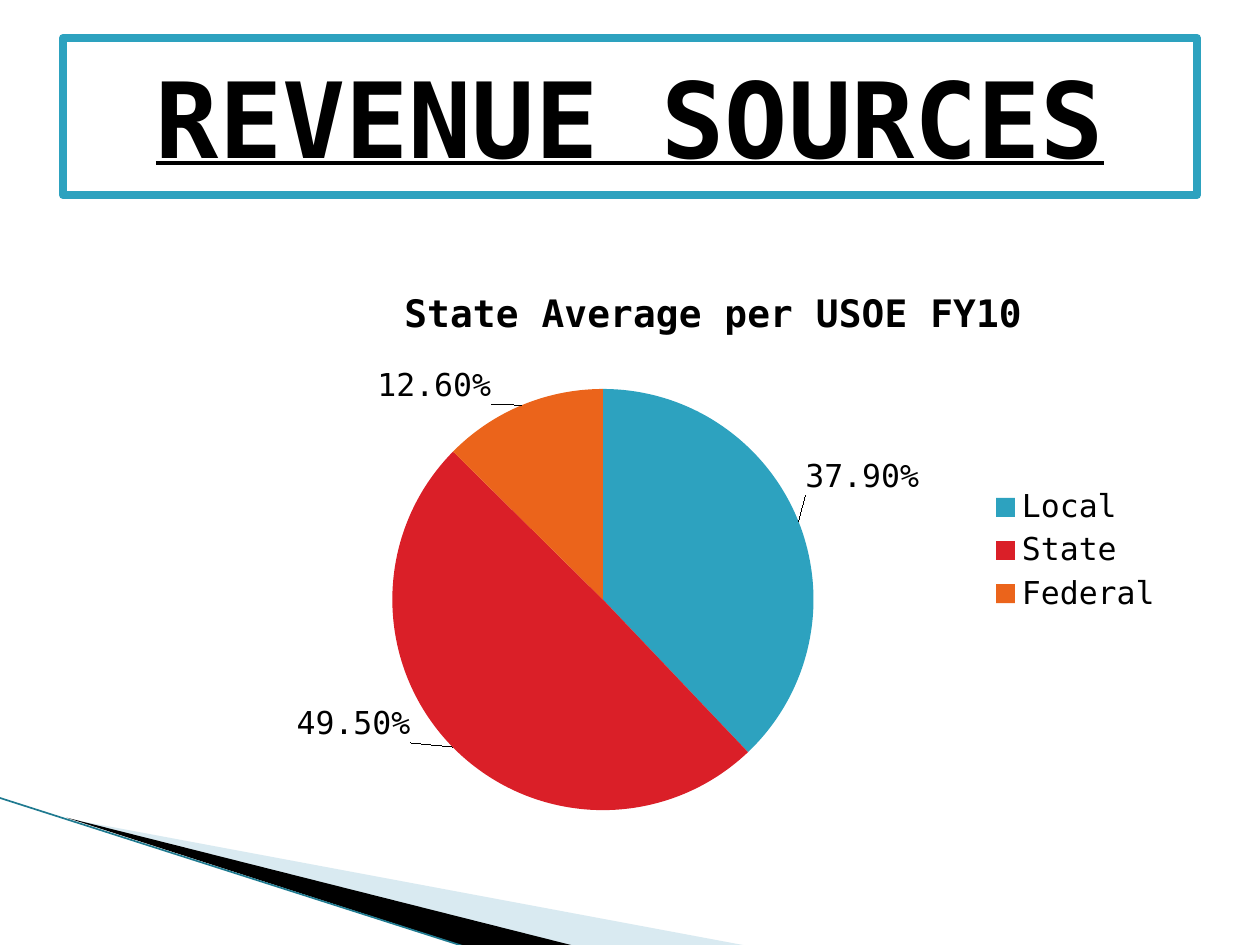
from dataclasses import dataclass

from lxml import etree
from pptx import Presentation
from pptx import util as u
from pptx.chart.data import CategoryChartData
from pptx.dml.color import RGBColor
from pptx.enum import chart as charts, shapes, text
from pptx.oxml.ns import qn


@dataclass(frozen=True)
class Theme:
    font: str = "DejaVu Sans Mono"
    ink: str = "000000"
    paper: str = "FFFFFF"
    accent: str = "2DA2BF"
    edge: str = "1F7A90"
    wing: str = "A0CBDC"
    slices: tuple = ("2DA2BF", "DA1F28", "EB641B")
    title_size: float = 60
    chart_title_size: float = 21.6
    chart_size: float = 18


THEME = Theme()
WIDTH, HEIGHT = 10, 7.5


def color(value):
    return RGBColor.from_string(value)


def style_font(font, size, bold=False):
    font.name = THEME.font
    font.size = u.Pt(size)
    font.bold = bold
    font.color.rgb = color(THEME.ink)


def add_wedge(slide, points, fill, opacity=None):
    corners = [(u.Inches(x), u.Inches(y)) for x, y in points]
    builder = slide.shapes.build_freeform(*corners[0])
    builder.add_line_segments(corners[1:], close=True)
    shape = builder.convert_to_shape()
    shape.shadow.inherit = False
    shape.fill.solid()
    shape.fill.fore_color.rgb = color(fill)
    shape.line.fill.background()
    if opacity is not None:
        swatch = shape.fill._xPr.find(".//" + qn("a:srgbClr"))
        etree.SubElement(swatch, qn("a:alpha"), val=str(opacity * 1000))


def add_edge(slide, start, end):
    points = [u.Inches(value) for value in (*start, *end)]
    connector = slide.shapes.add_connector(shapes.MSO_CONNECTOR.STRAIGHT, *points)
    connector.line.color.rgb = color(THEME.edge)
    connector.line.width = u.Pt(0.95)
    etree.SubElement(connector._element.spPr, qn("a:effectLst"))


def add_title(slide, wording):
    left, top = 0.05 * WIDTH, 0.04 * HEIGHT
    shape = slide.shapes.add_shape(
        shapes.MSO_SHAPE.RECTANGLE, u.Inches(left), u.Inches(top),
        u.Inches(WIDTH - 2 * left), u.Inches(HEIGHT / 6))
    shape.shadow.inherit = False
    shape.fill.solid()
    shape.fill.fore_color.rgb = color(THEME.paper)
    shape.line.color.rgb = color(THEME.accent)
    shape.line.width = u.Pt(4.33)
    shape.text_frame.vertical_anchor = text.MSO_ANCHOR.MIDDLE
    paragraph = shape.text_frame.paragraphs[0]
    paragraph.alignment = text.PP_ALIGN.CENTER
    run = paragraph.add_run()
    run.text = wording
    style_font(run.font, THEME.title_size, bold=True)
    run.font.underline = True


def add_layout(parent, **settings):
    layout = etree.Element(qn("c:layout"))
    manual = etree.SubElement(layout, qn("c:manualLayout"))
    for name, value in settings.items():
        etree.SubElement(manual, qn("c:" + name), val=str(value))
    for present in parent.findall(qn("c:layout")):
        parent.remove(present)
    parent.insert(1 if parent.tag == qn("c:dLbl") else 0, layout)


def label_slices(plot, series, offsets):
    plot.has_data_labels = True
    for labels in (plot.data_labels, series.data_labels):
        labels.number_format = "0.00%"
        labels.number_format_is_linked = False
        labels.show_value = True
        labels.show_percentage = False
        labels.position = charts.XL_LABEL_POSITION.OUTSIDE_END
        style_font(labels.font, THEME.chart_size)
    for index, (x, y) in enumerate(offsets):
        series.points[index].data_label.position = charts.XL_LABEL_POSITION.OUTSIDE_END
        label = series.data_labels._element.findall(qn("c:dLbl"))[index]
        add_layout(label, x=x, y=y)
    leader = series.data_labels._element.find(qn("c:showLeaderLines"))
    if leader is None:
        leader = etree.SubElement(series.data_labels._element, qn("c:showLeaderLines"))
    leader.set("val", "1")


def add_pie(slide, heading, shares, offsets):
    data = CategoryChartData(number_format="0.00%")
    data.categories = list(shares)
    data.add_series("Series 1", list(shares.values()))
    chart = slide.shapes.add_chart(
        charts.XL_CHART_TYPE.PIE, u.Inches(2), u.Inches(2.08),
        u.Inches(7.33), u.Inches(4.58), data).chart
    style_font(chart.font, THEME.chart_size)
    chart.has_title = True
    run = chart.chart_title.text_frame.paragraphs[0].add_run()
    run.text = heading
    style_font(run.font, THEME.chart_title_size, bold=True)
    chart.has_legend = True
    chart.legend.position = charts.XL_LEGEND_POSITION.RIGHT
    chart.legend.include_in_layout = False
    style_font(chart.legend.font, THEME.chart_size)
    plot = chart.plots[0]
    plot.vary_by_categories = True
    series = plot.series[0]
    for index, fill in enumerate(THEME.slices):
        point = series.points[index].format
        point.fill.solid()
        point.fill.fore_color.rgb = color(fill)
    label_slices(plot, series, offsets)
    area = chart._chartSpace.find(".//" + qn("c:plotArea"))
    add_layout(area, layoutTarget="inner", xMode="edge", yMode="edge",
               x=0.15, y=0.22, w=0.46, h=0.73)


def main():
    presentation = Presentation()
    presentation.slide_width = u.Inches(WIDTH)
    presentation.slide_height = u.Inches(HEIGHT)
    slide = presentation.slides.add_slide(presentation.slide_layouts[6])
    add_wedge(slide, [(0.55, 6.5), (5.95, 7.51), (4.56, 7.51)], THEME.wing, opacity=40)
    add_wedge(slide, [(0.53, 6.49), (4.57, 7.51), (3.72, 7.52)], THEME.ink)
    add_edge(slide, (-0.01, 6.33), (3.71, 7.52))
    add_title(slide, "REVENUE SOURCES")
    add_pie(slide, "State Average per USOE FY10",
            {"Local": 0.379, "State": 0.495, "Federal": 0.126},
            [(0, -0.04), (-0.04, -0.08), (-0.03, 0.01)])
    presentation.save("out.pptx")


if __name__ == "__main__":
    main()
